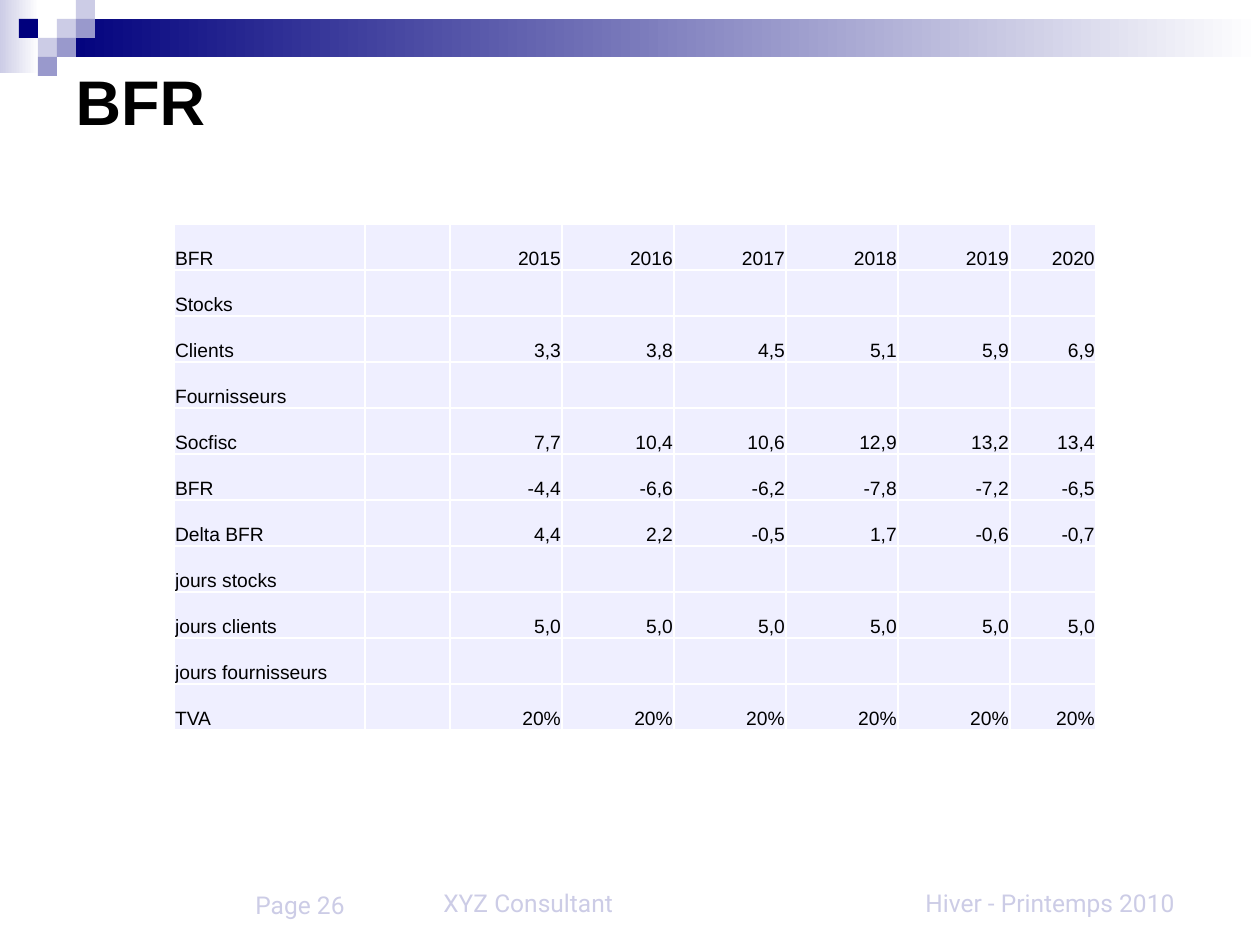
import dataclasses

import lxml.etree
import pptx
import pptx.dml.color
import pptx.enum.shapes
import pptx.enum.text
import pptx.oxml.ns
import pptx.util

ANCHOR = pptx.enum.text.MSO_ANCHOR
ALIGN = pptx.enum.text.PP_ALIGN


def rgb(code):
    return pptx.dml.color.RGBColor.from_string(code)


@dataclasses.dataclass(frozen=True)
class Theme:
    navy = rgb("00007D")
    violet = rgb("9999CC")
    lavender = rgb("CCCCE6")
    cell = rgb("EFEFFF")
    white = rgb("FFFFFF")
    black = rgb("000000")
    heading_font = "Arial"
    footer_font = "Roboto"
    title_size = 36
    footer_size = 14
    table_size = 11


THEME = Theme()
MOTIF_STEP = 19
MOTIF_SQUARES = [
    (3, 1, THEME.lavender),
    (4, 0, THEME.lavender),
    (4, 1, THEME.violet),
    (2, 2, THEME.lavender),
    (1, 1, THEME.navy),
    (3, 2, THEME.violet),
    (2, 3, THEME.violet),
]
COLUMN_WIDTHS = [191, 85] + [112] * 5 + [86]
ROW_HEIGHT = 46
BFR_ROWS = [
    ("BFR", "2015 2016 2017 2018 2019 2020"),
    ("Stocks", ""),
    ("Clients", "3,3 3,8 4,5 5,1 5,9 6,9"),
    ("Fournisseurs", ""),
    ("Socfisc", "7,7 10,4 10,6 12,9 13,2 13,4"),
    ("BFR", "-4,4 -6,6 -6,2 -7,8 -7,2 -6,5"),
    ("Delta BFR", "4,4 2,2 -0,5 1,7 -0,6 -0,7"),
    ("jours stocks", ""),
    ("jours clients", "5,0 5,0 5,0 5,0 5,0 5,0"),
    ("jours fournisseurs", ""),
    ("TVA", "20% 20% 20% 20% 20% 20%"),
]


def px(length):
    return pptx.util.Emu(round(length * 914400 / 126))


def write(frame, text, font, size, color, align=ALIGN.LEFT, bold=False):
    paragraph = frame.paragraphs[0]
    paragraph.alignment = align
    run = paragraph.add_run()
    run.text = text
    run.font.name = font
    run.font.size = pptx.util.Pt(size)
    run.font.bold = bold
    run.font.color.rgb = color


def add_block(slide, box, color, fade_to=None):
    block = slide.shapes.add_shape(
        pptx.enum.shapes.MSO_SHAPE.RECTANGLE, *map(px, box))
    block.shadow.inherit = False
    block.line.fill.background()
    if fade_to is None:
        block.fill.solid()
        block.fill.fore_color.rgb = color
        return
    block.fill.gradient()
    block.fill.gradient_angle = 0
    for stop, position, shade in zip(
            block.fill.gradient_stops, (0, 1), (color, fade_to)):
        stop.position = position
        stop.color.rgb = shade


def add_motif(slide):
    add_block(slide, (0, 0, 39, 73), THEME.lavender, THEME.white)
    add_block(slide, (57, 19, 1203, 38), THEME.navy, THEME.white)
    for column, row, color in MOTIF_SQUARES:
        add_block(slide, (column * MOTIF_STEP, row * MOTIF_STEP,
                          MOTIF_STEP, MOTIF_STEP), color)


def set_title(slide, text):
    title = slide.shapes.title
    title.left, title.top, title.width, title.height = map(px, (63, 6, 1134, 189))
    frame = title.text_frame
    frame.auto_size = pptx.enum.text.MSO_AUTO_SIZE.NONE
    frame.vertical_anchor = ANCHOR.MIDDLE
    write(frame, text, THEME.heading_font, THEME.title_size, THEME.black, bold=True)


def add_footer(slide, box, text, align):
    frame = slide.shapes.add_textbox(*map(px, box)).text_frame
    frame.word_wrap = True
    frame.vertical_anchor = ANCHOR.BOTTOM
    write(frame, text, THEME.footer_font, THEME.footer_size, THEME.lavender, align)


def add_borders(cell, color):
    qn = pptx.oxml.ns.qn
    properties = cell._tc.get_or_add_tcPr()
    for side in ("a:lnL", "a:lnR", "a:lnT", "a:lnB"):
        border = lxml.etree.SubElement(properties, qn(side), w=str(pptx.util.Pt(1)))
        fill = lxml.etree.SubElement(border, qn("a:solidFill"))
        lxml.etree.SubElement(fill, qn("a:srgbClr"), val=str(color))


def format_cell(cell):
    add_borders(cell, THEME.white)
    cell.fill.solid()
    cell.fill.fore_color.rgb = THEME.cell
    cell.vertical_anchor = ANCHOR.BOTTOM
    cell.margin_left = cell.margin_right = cell.margin_top = px(1)
    cell.margin_bottom = 0


def add_bfr_table(slide):
    table = slide.shapes.add_table(
        len(BFR_ROWS), len(COLUMN_WIDTHS), px(174), px(224),
        px(sum(COLUMN_WIDTHS)), px(ROW_HEIGHT * len(BFR_ROWS))).table
    table.first_row = table.horz_banding = False
    for column, width in zip(table.columns, COLUMN_WIDTHS):
        column.width = px(width)
    for row, (label, values) in zip(table.rows, BFR_ROWS):
        row.height = px(ROW_HEIGHT)
        texts = [label, ""] + (values.split() or [""] * 6)
        for index, (cell, text) in enumerate(zip(row.cells, texts)):
            format_cell(cell)
            if text:
                write(cell.text_frame, text, THEME.heading_font, THEME.table_size,
                      THEME.black, ALIGN.RIGHT if index else ALIGN.LEFT)


def main():
    deck = pptx.Presentation()
    deck.slide_width, deck.slide_height = px(1260), px(945)
    slide = deck.slides.add_slide(deck.slide_layouts[5])
    add_motif(slide)
    add_footer(slide, (431, 861, 399, 63), "XYZ Consultant", ALIGN.LEFT)
    add_footer(slide, (903, 861, 294, 63), "Hiver - Printemps 2010", ALIGN.CENTER)
    add_footer(slide, (63, 861, 294, 65), "Page 26", ALIGN.RIGHT)
    set_title(slide, "BFR")
    add_bfr_table(slide)
    deck.save("out.pptx")


if __name__ == "__main__":
    main()
